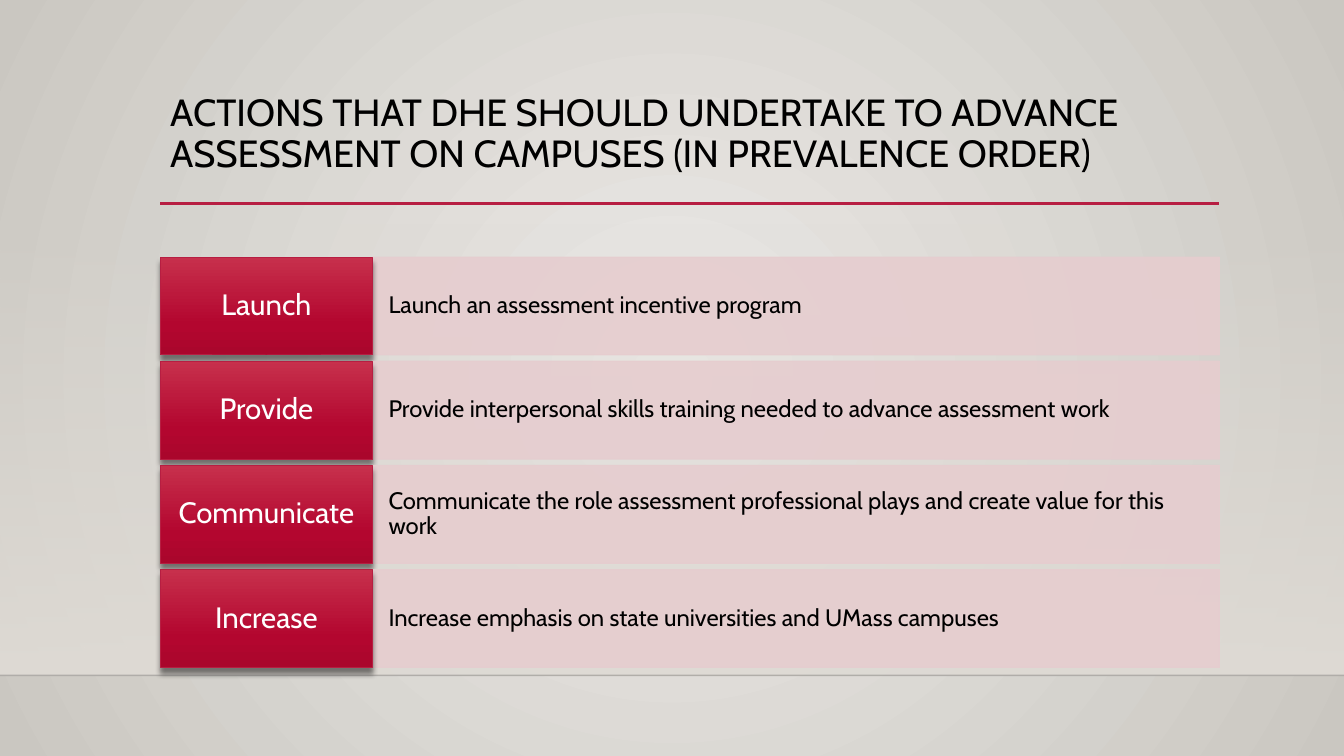
from lxml import etree
from pptx import Presentation
from pptx.dml.color import RGBColor
from pptx.enum.shapes import MSO_CONNECTOR, MSO_SHAPE
from pptx.enum.text import MSO_ANCHOR, PP_ALIGN
from pptx.oxml.ns import qn
from pptx.util import Pt

RECTANGLE = MSO_SHAPE.RECTANGLE
STRAIGHT = MSO_CONNECTOR.STRAIGHT
TOP, MIDDLE = MSO_ANCHOR.TOP, MSO_ANCHOR.MIDDLE
LEFT, CENTER = PP_ALIGN.LEFT, PP_ALIGN.CENTER

FONT = "Cabin"
BLACK, WHITE = "000000", "FFFFFF"
CRIMSON, PINK, STONE = "B71E42", "E6CDCF", "DFDBD5"
SLIDE_WIDTH, SLIDE_HEIGHT = 960, 540
MARGIN, CONTENT_WIDTH = 114.5, 756.5
LABEL_WIDTH = 151.5
FIRST_ROW, ROW_HEIGHT, ROW_PITCH = 183.6, 70, 74.4
FLOOR = 482.4

TITLE = (
    "ACTIONS THAT DHE SHOULD UNDERTAKE TO ADVANCE "
    "ASSESSMENT ON CAMPUSES (IN PREVALENCE ORDER)"
)
ACTIONS = [
    ("Launch", "Launch an assessment incentive program"),
    ("Provide", "Provide interpersonal skills training needed to advance assessment work"),
    ("Communicate", "Communicate the role assessment professional plays and create value for this work"),
    ("Increase", "Increase emphasis on state universities and UMass campuses"),
]


def rgb(color):
    return RGBColor.from_string(color)


def add_node(parent, tag, **attributes):
    values = {key: str(value) for key, value in attributes.items()}
    return etree.SubElement(parent, qn(tag), values)


def add_color(parent, color, opacity=100):
    node = add_node(parent, "a:srgbClr", val=color)
    if opacity < 100:
        add_node(node, "a:alpha", val=opacity * 1000)


def set_opacity(fill_parent, opacity):
    color = fill_parent.find(qn("a:solidFill")).find(qn("a:srgbClr"))
    add_node(color, "a:alpha", val=opacity * 1000)


def set_gradient(fill, fill_parent, stops, radial=False):
    fill.solid()
    solid = fill_parent.find(qn("a:solidFill"))
    gradient = etree.Element(qn("a:gradFill"), rotWithShape="1")
    stop_list = add_node(gradient, "a:gsLst")
    for position, color, opacity in stops:
        stop = add_node(stop_list, "a:gs", pos=position * 1000)
        add_color(stop, color, opacity)
    if radial:
        circle = add_node(gradient, "a:path", path="circle")
        add_node(circle, "a:fillToRect", l=50000, t=50000, r=50000, b=50000)
    else:
        add_node(gradient, "a:lin", ang=5400000, scaled=0)
    fill_parent.replace(solid, gradient)


def add_shadow(shape):
    effects = shape._element.spPr.find(qn("a:effectLst"))
    shadow = add_node(effects, "a:outerShdw", blurRad=Pt(4), dist=Pt(4),
                      dir=5400000, rotWithShape=0)
    add_color(shadow, BLACK, 48)


def add_rectangle(slide, left, top, width, height):
    shape = slide.shapes.add_shape(RECTANGLE, Pt(left), Pt(top), Pt(width), Pt(height))
    shape.shadow.inherit = False
    return shape


def add_rule(slide, left, right, top, color, weight, opacity=100):
    rule = slide.shapes.add_connector(STRAIGHT, Pt(left), Pt(top), Pt(right), Pt(top))
    rule.line.color.rgb = rgb(color)
    rule.line.width = Pt(weight)
    properties = rule._element.spPr
    if opacity < 100:
        set_opacity(properties.find(qn("a:ln")), opacity)
    add_node(properties, "a:effectLst")


def write(shape, text, size, color=BLACK, align=LEFT, anchor=MIDDLE, inset=(7.2, 3.6)):
    frame = shape.text_frame
    frame.word_wrap = True
    frame.vertical_anchor = anchor
    frame.margin_left = frame.margin_right = Pt(inset[0])
    frame.margin_top = frame.margin_bottom = Pt(inset[1])
    paragraph = frame.paragraphs[0]
    paragraph.alignment = align
    paragraph.line_spacing = 0.9
    run = paragraph.add_run()
    run.text = text
    run.font.name = FONT
    run.font.size = Pt(size)
    run.font.color.rgb = rgb(color)


def add_backdrop(slide):
    fill = slide.background.fill
    fill.solid()
    background = next(slide.element.iter(qn("p:bgPr")))
    set_gradient(fill, background, [(0, "ECEAE7", 100), (100, "CAC7C1", 100)], radial=True)
    wall = add_rectangle(slide, 0, 159, SLIDE_WIDTH, FLOOR - 159)
    set_gradient(wall.fill, wall._element.spPr, [(0, STONE, 0), (100, STONE, 100)])
    wall.line.fill.background()
    add_rule(slide, 0, SLIDE_WIDTH, FLOOR, "000001", 1, opacity=20)


def add_title(slide):
    add_rule(slide, MARGIN, MARGIN + CONTENT_WIDTH, 145.4, CRIMSON, 2.5)
    title = slide.shapes.add_textbox(Pt(MARGIN), Pt(63.4), Pt(CONTENT_WIDTH), Pt(82.8))
    write(title, TITLE, 27, anchor=TOP)


def add_action(slide, top, label, description):
    panel = add_rectangle(slide, MARGIN + LABEL_WIDTH, top,
                          CONTENT_WIDTH - LABEL_WIDTH, ROW_HEIGHT)
    panel.fill.solid()
    panel.fill.fore_color.rgb = rgb(PINK)
    panel.line.color.rgb = rgb(PINK)
    panel.line.width = Pt(0.75)
    properties = panel._element.spPr
    for fill_parent in (properties, properties.find(qn("a:ln"))):
        set_opacity(fill_parent, 90)
    write(panel, description, 17, inset=(11.5, 18))

    tile = add_rectangle(slide, MARGIN, top, LABEL_WIDTH, ROW_HEIGHT)
    set_gradient(tile.fill, tile._element.spPr,
                 [(0, "C7304C", 100), (69, "B3062F", 100), (100, "AA062C", 100)])
    tile.line.color.rgb = rgb(CRIMSON)
    tile.line.width = Pt(0.75)
    add_shadow(tile)
    write(tile, label, 21, color=WHITE, align=CENTER, inset=(8, 7.2))


def main():
    presentation = Presentation()
    presentation.slide_width = Pt(SLIDE_WIDTH)
    presentation.slide_height = Pt(SLIDE_HEIGHT)
    slide = presentation.slides.add_slide(presentation.slide_layouts[6])
    add_backdrop(slide)
    add_title(slide)
    for row, (label, description) in enumerate(ACTIONS):
        add_action(slide, FIRST_ROW + row * ROW_PITCH, label, description)
    presentation.save("out.pptx")


if __name__ == "__main__":
    main()
